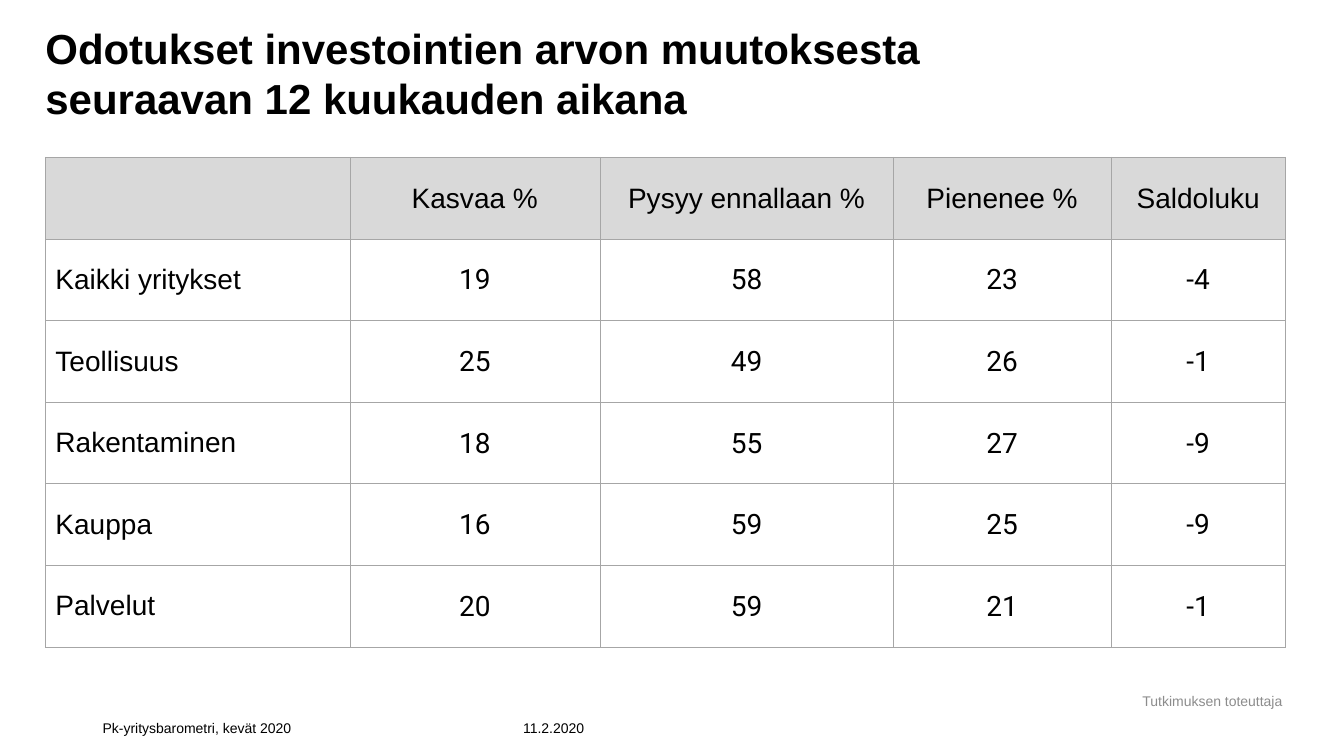
import pptx
import pptx.dml.color
import pptx.enum.text
import pptx.oxml
import pptx.oxml.ns
import pptx.util
from pptx.util import Inches

ALIGN = pptx.enum.text.PP_ALIGN
ANCHOR = pptx.enum.text.MSO_ANCHOR
BLACK = "000000"
BORDER_COLOR = "A6A6A6"
HEADER_FILL = "D9D9D9"
ROW_HEIGHT = 0.81
COLUMN_WIDTHS = [3.02, 2.48, 2.91, 2.16, 1.73]
ROWS = [
    ["", "Kasvaa %", "Pysyy ennallaan %", "Pienenee %", "Saldoluku"],
    ["Kaikki yritykset", "19", "58", "23", "-4"],
    ["Teollisuus", "25", "49", "26", "-1"],
    ["Rakentaminen", "18", "55", "27", "-9"],
    ["Kauppa", "16", "59", "25", "-9"],
    ["Palvelut", "20", "59", "21", "-1"],
]


def rgb(color):
    return pptx.dml.color.RGBColor.from_string(color)


def set_all(target, values):
    for name, value in values.items():
        setattr(target, name, value)


def write(frame, text, size, color=BLACK, font="Arial", align=ALIGN.LEFT, bold=False):
    frame.text = text
    for paragraph in frame.paragraphs:
        paragraph.alignment = align
        set_all(paragraph.font, {"name": font, "size": pptx.util.Pt(size), "bold": bold})
        paragraph.font.color.rgb = rgb(color)


def place(shape, left, top, width, height):
    set_all(shape, {"left": Inches(left), "top": Inches(top),
                    "width": Inches(width), "height": Inches(height)})


def add_title(slide, text):
    title = slide.shapes.title
    place(title, 0.45, 0, 12.3, 1.22)
    set_all(title.text_frame, {
        "margin_left": 0, "margin_top": 0, "margin_right": 0, "margin_bottom": 0,
        "vertical_anchor": ANCHOR.BOTTOM, "word_wrap": True,
        "auto_size": pptx.enum.text.MSO_AUTO_SIZE.NONE,
    })
    write(title.text_frame, text, 30, bold=True)


def add_label(slide, text, box, anchor, **style):
    label = slide.shapes.add_textbox(*map(Inches, box))
    set_all(label.text_frame, {"word_wrap": True, "vertical_anchor": anchor})
    write(label.text_frame, text, 10, **style)


def set_borders(cell):
    properties = cell._tc.get_or_add_tcPr()
    for position, side in enumerate(("lnL", "lnR", "lnT", "lnB")):
        border = pptx.oxml.parse_xml(
            f'<a:{side} {pptx.oxml.ns.nsdecls("a")} w="{pptx.util.Pt(0.5)}">'
            f'<a:solidFill><a:srgbClr val="{BORDER_COLOR}"/></a:solidFill></a:{side}>')
        properties.insert(position, border)


def format_cell(cell, text, is_header, is_label):
    cell.vertical_anchor = ANCHOR.MIDDLE
    if is_header:
        cell.fill.solid()
        cell.fill.fore_color.rgb = rgb(HEADER_FILL)
    else:
        cell.fill.background()
    if not is_label:
        set_all(cell, {"margin_left": Inches(0.01), "margin_right": Inches(0.01),
                       "margin_top": Inches(0.01), "margin_bottom": 0})
    write(cell.text_frame, text, 20,
          font="Arial" if is_header or is_label else "Roboto",
          align=ALIGN.LEFT if is_label else ALIGN.CENTER)
    set_borders(cell)


def add_expectations_table(slide):
    table = slide.shapes.add_table(
        len(ROWS), len(COLUMN_WIDTHS), Inches(0.45), Inches(1.56),
        Inches(sum(COLUMN_WIDTHS)), Inches(ROW_HEIGHT * len(ROWS))).table
    table.horz_banding = False
    for column, width in zip(table.columns, COLUMN_WIDTHS):
        column.width = Inches(width)
    for row_index, row in enumerate(ROWS):
        table.rows[row_index].height = Inches(ROW_HEIGHT)
        for column_index, text in enumerate(row):
            format_cell(table.cell(row_index, column_index), text,
                        row_index == 0, column_index == 0)


def main():
    presentation = pptx.Presentation()
    set_all(presentation, {"slide_width": Inches(13.33), "slide_height": Inches(7.5)})
    slide = presentation.slides.add_slide(presentation.slide_layouts[5])
    add_title(slide, "Odotukset investointien arvon muutoksesta \vseuraavan 12 kuukauden aikana")
    add_expectations_table(slide)
    add_label(slide, "Tutkimuksen toteuttaja", (11.16, 6.82, 1.73, 0.26), ANCHOR.MIDDLE,
              color="8C8C8C", align=ALIGN.CENTER)
    add_label(slide, "Pk-yritysbarometri, kevät 2020", (0.92, 7, 4.17, 0.35), ANCHOR.BOTTOM)
    add_label(slide, "11.2.2020", (5.09, 7, 0.87, 0.35), ANCHOR.BOTTOM)
    presentation.save("out.pptx")


if __name__ == "__main__":
    main()
